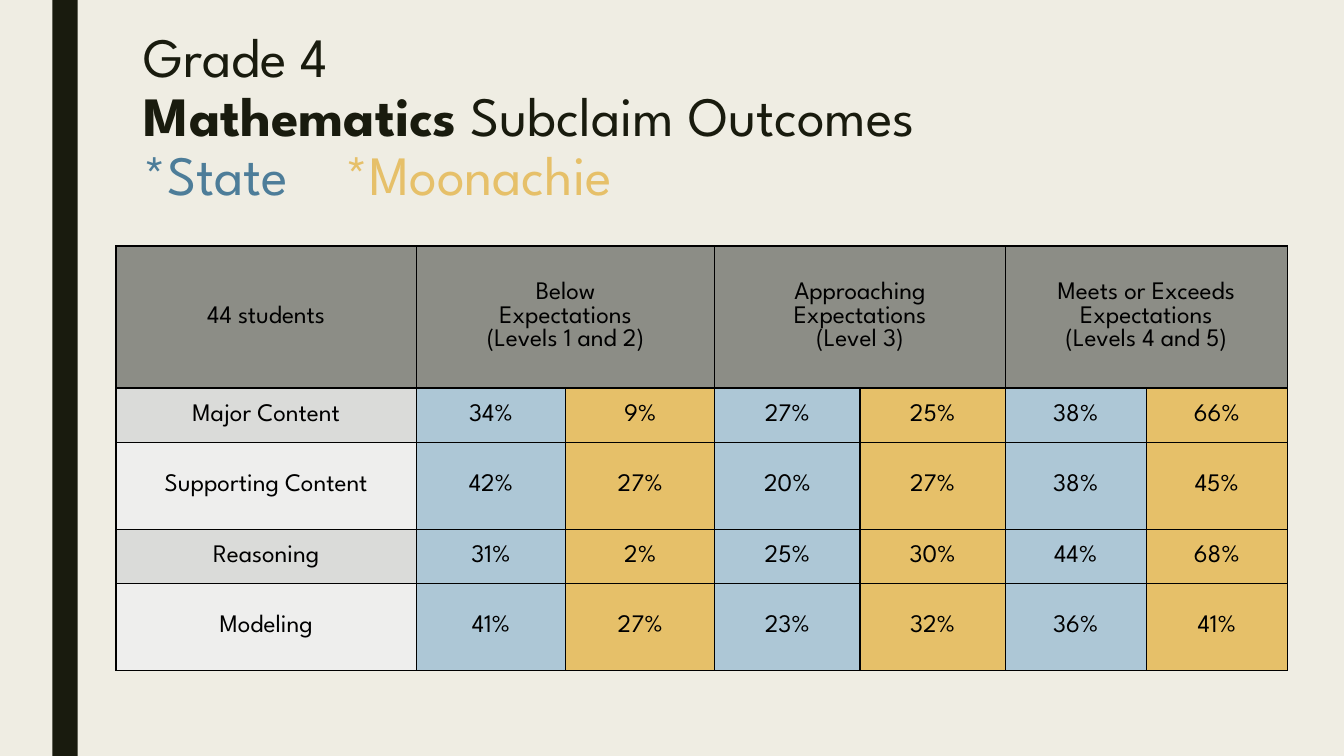
from pptx import Presentation
from pptx import util as u
from pptx.dml.color import RGBColor
from pptx.enum import shapes, text
from pptx.oxml import parse_xml
from pptx.oxml.ns import nsdecls

INK, BLACK, BLUE, GOLD = "191B0E", "000000", "ADC7D6", "E6C069"
HEADERS = ["44 students", "Below\nExpectations\n(Levels 1 and 2)",
           "Approaching\nExpectations\n(Level 3)",
           "Meets or Exceeds\nExpectations\n(Levels 4 and 5)"]
OUTCOMES = [
    ["Major Content", "34%", "9%", "27%", "25%", "38%", "66%"],
    ["Supporting Content", "42%", "27%", "20%", "27%", "38%", "45%"],
    ["Reasoning", "31%", "2%", "25%", "30%", "44%", "68%"],
    ["Modeling", "41%", "27%", "23%", "32%", "36%", "41%"],
]


def rgb(value):
    return RGBColor.from_string(value)


class Deck:
    font = "League Spartan"

    def __init__(self):
        self.prs = Presentation()
        self.prs.slide_width = u.Inches(13.33)
        self.prs.slide_height = u.Inches(7.5)
        self.s = self.prs.slides.add_slide(self.prs.slide_layouts[6])

    def background(self, color):
        fill = self.s.background.fill
        fill.solid()
        fill.fore_color.rgb = rgb(color)

    def bar(self, box, color):
        sp = self.s.shapes.add_shape(shapes.MSO_SHAPE.RECTANGLE, *map(u.Inches, box))
        sp.shadow.inherit = False
        sp.fill.solid()
        sp.fill.fore_color.rgb = rgb(color)
        sp.line.fill.background()

    def title(self, box, lines, size, spacing):
        tf = self.s.shapes.add_textbox(*map(u.Inches, box)).text_frame
        tf.word_wrap = True
        p = tf.paragraphs[0]
        p.line_spacing = spacing
        p.font.name, p.font.size = self.font, u.Pt(size)
        for i, line in enumerate(lines):
            if i:
                p.add_line_break()
            for words, color, bold in line:
                r = p.add_run()
                r.text = words
                r.font.bold = bold
                r.font.color.rgb = rgb(color)

    def table(self, box, widths, heights):
        shape = self.s.shapes.add_table(len(heights), len(widths), *map(u.Inches, box))
        table = shape.table
        for column, width in zip(table.columns, widths):
            column.width = u.Inches(width)
        for row, height in zip(table.rows, heights):
            row.height = u.Inches(height)
        return table

    def cell(self, cell, words, color):
        cell.margin_left = cell.margin_right = u.Inches(0.14)
        cell.margin_top = cell.margin_bottom = u.Inches(0.05)
        cell.vertical_anchor = text.MSO_ANCHOR.MIDDLE
        cell.text_frame.text = words
        for p in cell.text_frame.paragraphs:
            p.alignment = text.PP_ALIGN.CENTER
            p.font.name, p.font.size = self.font, u.Pt(18)
            p.font.bold = False
            p.font.color.rgb = rgb(BLACK)
        self.borders(cell)
        cell.fill.solid()
        cell.fill.fore_color.rgb = rgb(color)

    def borders(self, cell):
        for side in ("lnL", "lnR", "lnT", "lnB"):
            cell._tc.get_or_add_tcPr().append(parse_xml(
                f'<a:{side} {nsdecls("a")} w="12700"><a:solidFill>'
                f'<a:srgbClr val="{BLACK}"/></a:solidFill></a:{side}>'))


def main():
    deck = Deck()
    deck.background("EFEDE3")
    deck.bar((0.52, 0, 0.25, 7.5), INK)
    deck.title((1.33, 0.25, 10.5, 1.62), [
        [("Grade 4 ", INK, False)],
        [("Mathematics", INK, True), (" Subclaim Outcomes", INK, False)],
        [("*State \t", "4D7D99", False), ("*Moonachie", GOLD, False)],
    ], 39.6, 0.89)
    table = deck.table((1.15, 2.44, 11.64, 4.21),
                       [2.98, 1.48, 1.48, 1.44, 1.44, 1.4, 1.4],
                       [1.41, 0.54, 0.86, 0.54, 0.86])
    for col in range(7):
        deck.borders(table.cell(0, col)) if col and col % 2 == 0 else None
    for i, header in enumerate(HEADERS):
        col = max(0, 2 * i - 1)
        if i:
            table.cell(0, col).merge(table.cell(0, col + 1))
        deck.cell(table.cell(0, col), header, "8C8D86")
    for row, values in enumerate(OUTCOMES, 1):
        label = "DADBD9" if row % 2 else "EEEEED"
        for col, value in enumerate(values):
            color = (GOLD, BLUE)[col % 2] if col else label
            deck.cell(table.cell(row, col), value, color)
    deck.prs.save("out.pptx")


if __name__ == "__main__":
    main()
